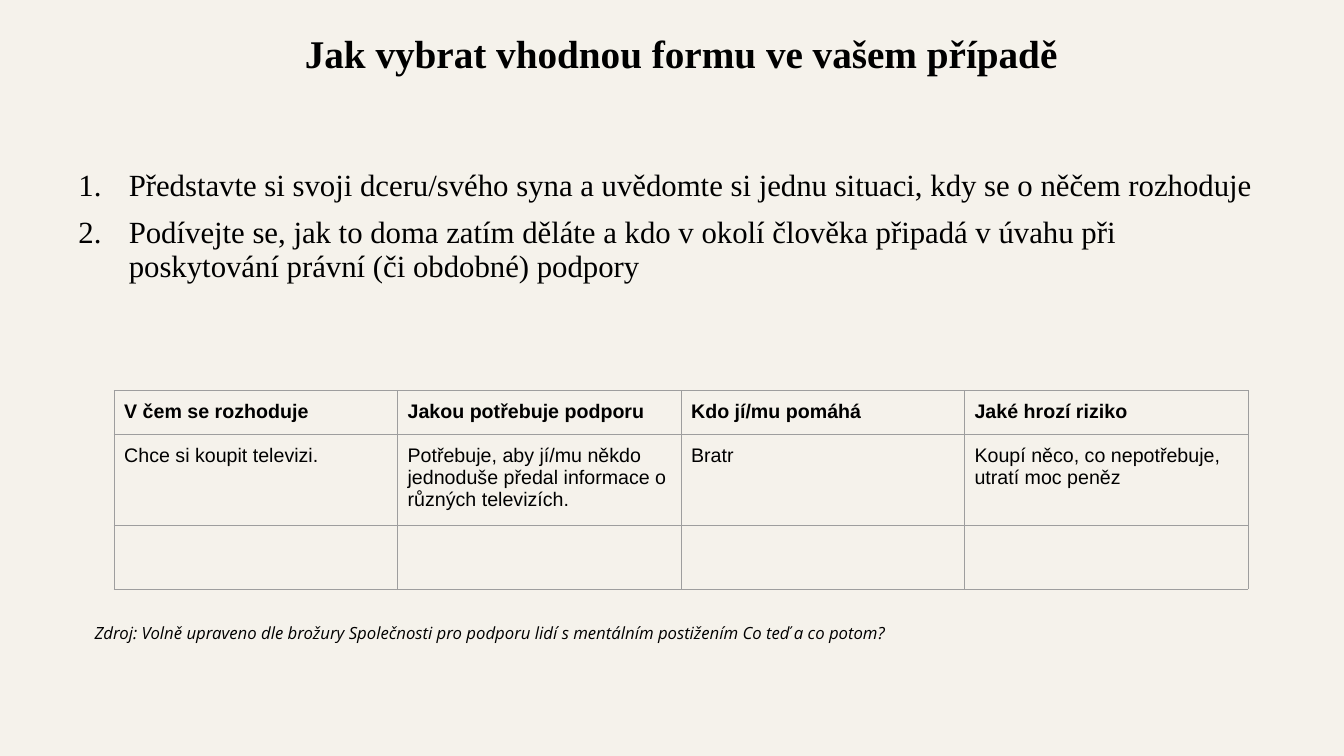
from dataclasses import dataclass

from lxml import etree
from pptx import Presentation
from pptx.dml.color import RGBColor
from pptx.enum.text import MSO_ANCHOR, PP_ALIGN
from pptx.oxml.ns import qn
from pptx.util import Pt

LEFT, CENTER = PP_ALIGN.LEFT, PP_ALIGN.CENTER
TOP, BOTTOM = MSO_ANCHOR.TOP, MSO_ANCHOR.BOTTOM


@dataclass(frozen=True)
class Theme:
    """Colours, fonts and type sizes of the slide."""
    background: str = "F5F2EB"
    ink: str = "000000"
    border: str = "9E9E9E"
    heading_font: str = "Times New Roman"
    table_font: str = "Arial"
    source_font: str = "Open Sans"
    title_size: float = 28
    step_size: float = 22
    table_size: float = 14
    source_size: float = 12


def write(paragraph, text, *, font, size, color, bold=False, italic=False,
          align=LEFT, line_spacing=1, space_before=0):
    """Put formatted text into a paragraph."""
    paragraph.alignment = align
    paragraph.line_spacing = line_spacing
    paragraph.space_before = Pt(space_before)
    run = paragraph.add_run()
    run.text = text
    run.font.name = font
    run.font.size = Pt(size)
    run.font.bold = bold
    run.font.italic = italic
    run.font.color.rgb = RGBColor.from_string(color)


def number(paragraph, indent):
    """Give a paragraph an automatic number with a hanging indent."""
    properties = paragraph._p.get_or_add_pPr()
    properties.set("marL", str(Pt(indent)))
    properties.set("indent", str(-Pt(indent)))
    bullet_font = etree.SubElement(properties, qn("a:buFont"))
    bullet_font.set("typeface", Theme.heading_font)
    etree.SubElement(properties, qn("a:buAutoNum")).set("type", "arabicPeriod")


def outline(cell, color, width):
    """Draw all four borders of a table cell."""
    properties = cell._tc.get_or_add_tcPr()
    for index, side in enumerate(("lnL", "lnR", "lnT", "lnB")):
        line = etree.Element(qn(f"a:{side}"), w=str(Pt(width)))
        fill = etree.SubElement(line, qn("a:solidFill"))
        etree.SubElement(fill, qn("a:srgbClr")).set("val", color)
        properties.insert(index, line)


class SlideBuilder:
    """Adds styled elements to the current slide."""

    def __init__(self, slide, theme):
        self.slide = slide
        self.theme = theme
        fill = slide.background.fill
        fill.solid()
        fill.fore_color.rgb = RGBColor.from_string(theme.background)

    def text_frame(self, left, top, width, height, side_inset=0, anchor=TOP):
        """Add a wrapping text box and return its frame."""
        shape = self.slide.shapes.add_textbox(Pt(left), Pt(top), Pt(width), Pt(height))
        frame = shape.text_frame
        frame.word_wrap = True
        frame.vertical_anchor = anchor
        frame.margin_left = frame.margin_right = Pt(side_inset)
        frame.margin_top = frame.margin_bottom = Pt(3.6)
        return frame

    def title(self, text, *box):
        """Add the slide title."""
        theme = self.theme
        frame = self.text_frame(*box, anchor=BOTTOM)
        write(frame.paragraphs[0], text, font=theme.heading_font, size=theme.title_size,
              color=theme.ink, bold=True, align=CENTER, line_spacing=0.9)

    def numbered_list(self, steps, *box):
        """Add the numbered steps."""
        theme = self.theme
        frame = self.text_frame(*box)
        for index, step in enumerate(steps):
            paragraph = frame.add_paragraph() if index else frame.paragraphs[0]
            number(paragraph, 36)
            write(paragraph, step, font=theme.heading_font, size=theme.step_size,
                  color=theme.ink, line_spacing=0.9, space_before=10 if index else 0)

    def source(self, text, *box):
        """Add the source line."""
        theme = self.theme
        frame = self.text_frame(*box, side_inset=7.2)
        write(frame.paragraphs[0], text, font=theme.source_font, size=theme.source_size,
              color=theme.ink, italic=True)

    def table(self, rows, left, top, column_width, row_heights):
        """Add a bordered table with a bold header row."""
        theme = self.theme
        columns = len(rows[0])
        frame = self.slide.shapes.add_table(
            len(rows), columns, Pt(left), Pt(top),
            Pt(column_width * columns), Pt(sum(row_heights)))
        table = frame.table
        table.first_row = table.horz_banding = False
        for column in table.columns:
            column.width = Pt(column_width)
        for row_index, (texts, height) in enumerate(zip(rows, row_heights)):
            table.rows[row_index].height = Pt(height)
            for column_index, text in enumerate(texts):
                cell = table.cell(row_index, column_index)
                cell.margin_left = cell.margin_right = Pt(7.2)
                cell.margin_top = cell.margin_bottom = Pt(7.2)
                cell.fill.background()
                outline(cell, theme.border, 0.75)
                if text:
                    write(cell.text_frame.paragraphs[0], text, font=theme.table_font,
                          size=theme.table_size, color=theme.ink, bold=row_index == 0)


def main():
    """Build and save the slide."""
    presentation = Presentation()
    presentation.slide_width, presentation.slide_height = Pt(960), Pt(540)
    slide = presentation.slides.add_slide(presentation.slide_layouts[6])
    builder = SlideBuilder(slide, Theme())
    builder.numbered_list([
        "Představte si svoji dceru/svého syna a uvědomte si jednu situaci, "
        "kdy se o něčem rozhoduje",
        "Podívejte se, jak to doma zatím děláte a kdo v okolí člověka připadá v úvahu "
        "při poskytování právní (či obdobné) podpory",
    ], 56, 118, 848, 100)
    builder.title("Jak vybrat vhodnou formu ve vašem případě", 96.5, 4.5, 780, 54)
    builder.source("Zdroj: Volně upraveno dle brožury Společnosti pro podporu lidí "
                   "s mentálním postižením Co teď a co potom?", 60.5, 441.5, 841, 26.5)
    builder.table([
        ["V čem se rozhoduje", "Jakou potřebuje podporu",
         "Kdo jí/mu pomáhá", "Jaké hrozí riziko"],
        ["Chce si koupit televizi.",
         "Potřebuje, aby jí/mu někdo jednoduše předal informace o různých televizích.",
         "Bratr", "Koupí něco, co nepotřebuje, utratí moc peněz"],
        [""] * 4,
    ], 81.5, 279, 202.5, [31, 65, 45.5])
    presentation.save("out.pptx")


if __name__ == "__main__":
    main()
